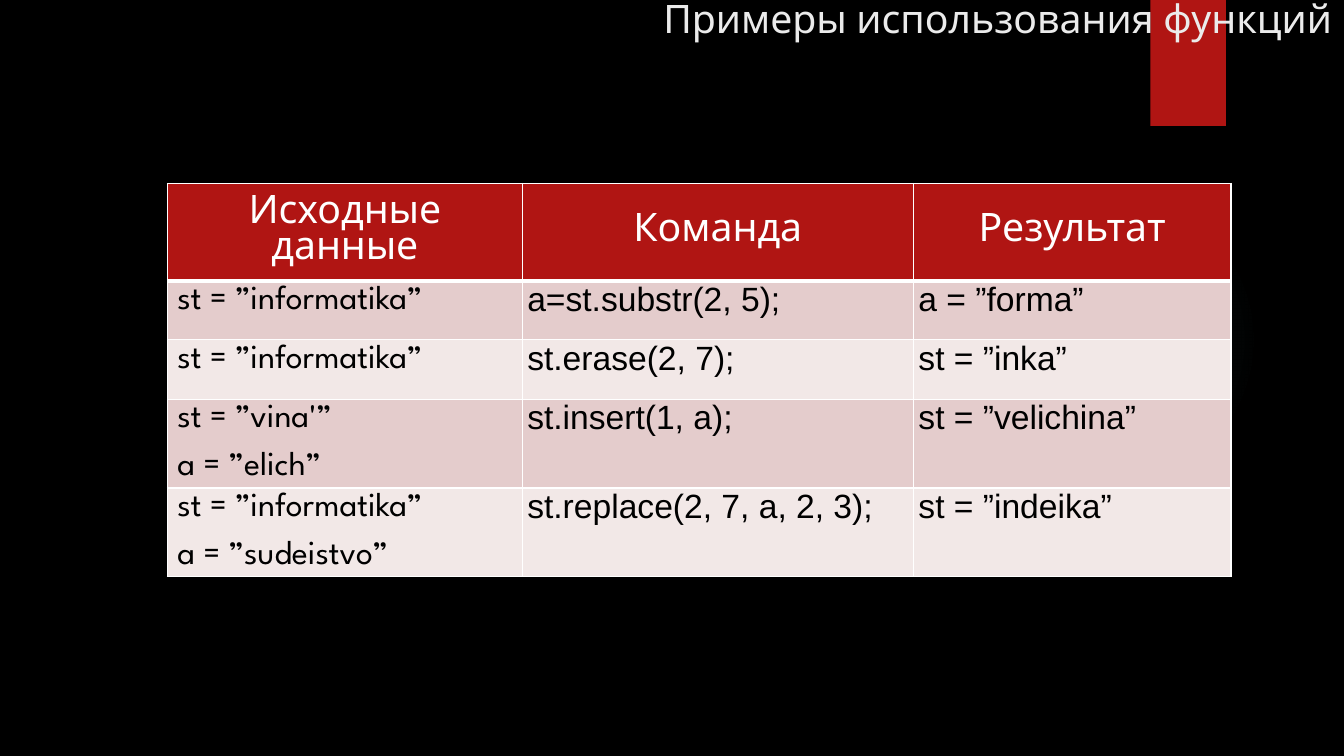
import pptx
import pptx.util
import pptx.dml.color
import pptx.enum.shapes
import pptx.enum.text
import pptx.oxml
import pptx.oxml.ns

Inches, Pt = pptx.util.Inches, pptx.util.Pt
RGB = pptx.dml.color.RGBColor
ALIGN = pptx.enum.text.PP_ALIGN
ANCHOR = pptx.enum.text.MSO_ANCHOR
SHAPE = pptx.enum.shapes.MSO_SHAPE
NS = pptx.oxml.ns.nsdecls("a")

BLACK = RGB(0x00, 0x00, 0x00)
WHITE = RGB(0xFF, 0xFF, 0xFF)
RED = RGB(0xB0, 0x15, 0x13)
TITLE_GREY = RGB(0xEB, 0xEB, 0xEB)
GLOW = RGB(0x50, 0xB9, 0xC1)
BANDS = [RGB(0xE4, 0xCC, 0xCC), RGB(0xF2, 0xE8, 0xE7)]
SPARTAN = "League Spartan"
SPARTAN_LEADING = 0.92


def add_run(p, text, size, font, color):
    r = p.add_run()
    r.text = text
    r.font.size = Pt(size)
    r.font.name = font
    r.font.color.rgb = color
    if font == SPARTAN:
        p.line_spacing = Pt(round(size * SPARTAN_LEADING, 1))


def add_borders(cell, widths):
    """Draw white cell borders; widths maps side letters L, R, T, B to points."""
    tcPr = cell._tc.get_or_add_tcPr()
    for side, width in widths.items():
        tcPr.append(pptx.oxml.parse_xml(
            f'<a:ln{side} {NS} w="{Pt(width)}"><a:solidFill><a:srgbClr val="{WHITE}"/>'
            f'</a:solidFill></a:ln{side}>'))


prs = pptx.Presentation()
prs.slide_width, prs.slide_height = Inches(13.33), Inches(7.5)
s = prs.slides.add_slide(prs.slide_layouts[6])
s.background.fill.solid()
s.background.fill.fore_color.rgb = BLACK

# Faint glow
glow = s.shapes.add_shape(SHAPE.OVAL, Inches(9.41), Inches(1.83), Inches(3.08), Inches(3.08))
glow.shadow.inherit = False
glow.line.fill.background()
stops = "".join(
    f'<a:gs pos="{pos * 1000}"><a:srgbClr val="{GLOW}"><a:alpha val="{alpha * 1000}"/></a:srgbClr></a:gs>'
    for pos, alpha in [(0, 7), (36, 6), (69, 0), (100, 0)])
glow._element.spPr.find(pptx.oxml.ns.qn("a:prstGeom")).addnext(pptx.oxml.parse_xml(
    f'<a:gradFill {NS}><a:gsLst>{stops}</a:gsLst><a:path path="circle">'
    '<a:fillToRect l="50000" t="50000" r="50000" b="50000"/></a:path></a:gradFill>'))

# Red tab
tab = s.shapes.add_shape(SHAPE.RECTANGLE, Inches(11.41), 0, Inches(0.75), Inches(1.25))
tab.shadow.inherit = False
tab.fill.solid()
tab.fill.fore_color.rgb = RED
tab.line.fill.background()
tab._element.spPr.find(pptx.oxml.ns.qn("a:effectLst")).append(pptx.oxml.parse_xml(
    f'<a:outerShdw {NS} blurRad="{Pt(3)}" dist="{Pt(2)}" dir="5400000" rotWithShape="0">'
    f'<a:srgbClr val="{BLACK}"><a:alpha val="45000"/></a:srgbClr></a:outerShdw>'))

# Title
tf = s.shapes.add_textbox(Inches(3.62), 0, Inches(9.69), Inches(0.87)).text_frame
tf.word_wrap = True
tf.paragraphs[0].alignment = ALIGN.RIGHT
add_run(tf.paragraphs[0], "Примеры использования функций", 28, SPARTAN, TITLE_GREY)

# Table of string functions
rows = [
    (["Исходные данные"], "Команда", "Результат"),
    (["st = ”informatika”"], "a=st.substr(2, 5);", "a = ”forma”"),
    (["st = ”informatika”"], "st.erase(2, 7);", "st = ”inka”"),
    (["st = ”vina'”", "a = ”elich”"], "st.insert(1, a);", "st = ”velichina”"),
    (["st = ”informatika”", "a = ”sudeistvo”"], "st.replace(2, 7, a, 2, 3);", "st = ”indeika”"),
]
col_widths = [3.52, 3.88, 3.15]
row_heights = [0.97, 0.58, 0.59, 0.88, 0.88]
table = s.shapes.add_table(len(rows), len(col_widths), Inches(1.66), Inches(1.82),
                           Inches(sum(col_widths)), Inches(sum(row_heights))).table
for col, width in zip(table.columns, col_widths):
    col.width = Inches(width)
for row, height in zip(table.rows, row_heights):
    row.height = Inches(height)

for i, (source, command, result) in enumerate(rows):
    for j, lines in enumerate([source, [command], [result]]):
        cell = table.cell(i, j)
        header = i == 0
        add_borders(cell, {"L": 1, "R": 1, "T": 3 if i == 1 else 1, "B": 3 if header else 1})
        cell.fill.solid()
        cell.fill.fore_color.rgb = RED if header else BANDS[(i - 1) % 2]
        if header:
            cell.vertical_anchor = ANCHOR.MIDDLE
        elif j > 0:
            cell.margin_left = cell.margin_right = Inches(0.05)
            cell.margin_top = cell.margin_bottom = 0
        tf = cell.text_frame
        for k, line in enumerate(lines):
            p = tf.add_paragraph() if k else tf.paragraphs[0]
            if header:
                p.alignment = ALIGN.CENTER
                add_run(p, line, 28, SPARTAN, WHITE)
                continue
            p.alignment = ALIGN.JUSTIFY if j else ALIGN.LEFT
            p.space_before = Pt(6 if k else 0)
            p.space_after = Pt(6)
            add_run(p, line, 24, "Arial" if j else SPARTAN, BLACK)

prs.save("out.pptx")
